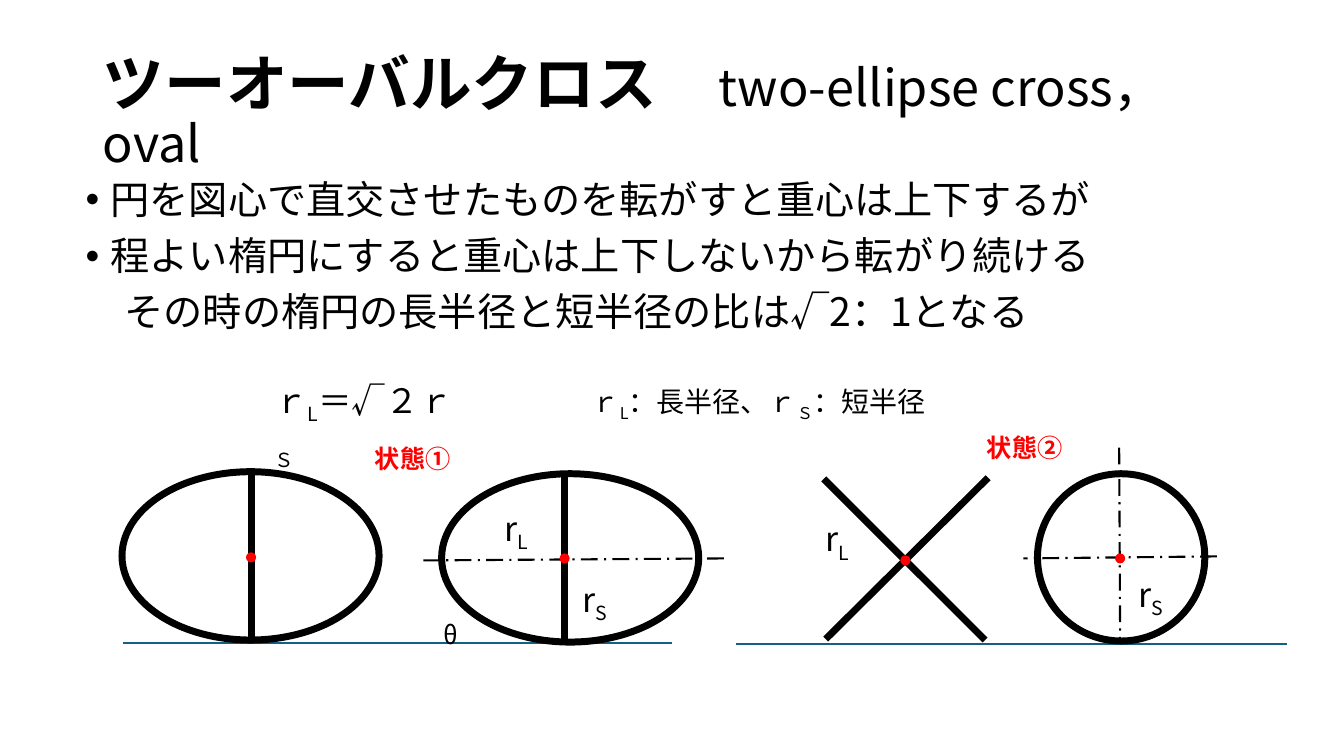
from dataclasses import dataclass
from typing import NamedTuple

from lxml.etree import SubElement as Sub
from pptx import Presentation
from pptx.dml.color import RGBColor as Rgb
from pptx.enum.dml import MSO_LINE_DASH_STYLE as Dash
from pptx.enum.shapes import MSO_CONNECTOR as Link, MSO_SHAPE as Form
from pptx.enum.text import MSO_ANCHOR as Anchor, PP_ALIGN as Align
from pptx.oxml.ns import qn
from pptx.util import Inches, Pt


@dataclass(frozen=True)
class Theme:
    font: str = "Noto Sans CJK JP"
    black: Rgb = Rgb(0, 0, 0)
    red: Rgb = Rgb(255, 0, 0)
    blue: Rgb = Rgb(0x15, 0x60, 0x82)
    title: int = 44
    sub: int = 36
    body: int = 28
    math: int = 24
    note: int = 20
    label: int = 18
    thick: float = 5
    thin: float = 1.5


THEME = Theme()


class Bit(NamedTuple):
    text: str
    size: int
    low: bool = False
    bold: bool = False
    color: Rgb = THEME.black


class Label(NamedTuple):
    x: float
    y: float
    w: float
    h: float
    bits: list[Bit]


class Stroke(NamedTuple):
    x1: float
    y1: float
    x2: float
    y2: float
    width: float = THEME.thick
    color: Rgb = THEME.black
    dash: bool = False


class Oval(NamedTuple):
    x: float
    y: float
    w: float
    h: float


def style(run, bit: Bit) -> None:
    font = run.font
    font.name = THEME.font
    font.size = Pt(bit.size)
    font.bold = bit.bold
    font.color.rgb = bit.color
    props = run._r.get_or_add_rPr()
    if bit.low:
        props.set("baseline", "-25000")
    Sub(props, qn("a:ea")).set("typeface", THEME.font)


def write(para, bits: list[Bit]) -> None:
    for bit in bits:
        if bit.text.startswith("\n"):
            para.add_line_break()
        run = para.add_run()
        run.text = bit.text.strip("\n")
        style(run, bit)


def add_box(slide, x: float, y: float, w: float, h: float):
    box = slide.shapes.add_textbox(Inches(x), Inches(y), Inches(w), Inches(h))
    box.text_frame.word_wrap = True
    return box.text_frame


def add_label(slide, label: Label) -> None:
    frame = add_box(slide, *label[:4])
    write(frame.paragraphs[0], label.bits)


def add_title(slide) -> None:
    title = slide.shapes.title
    title.left, title.top = Inches(0.92), Inches(0.4)
    title.width, title.height = Inches(11.5), Inches(1.45)
    frame = title.text_frame
    frame.word_wrap = True
    frame.vertical_anchor = Anchor.MIDDLE
    para = frame.paragraphs[0]
    para.alignment = Align.LEFT
    para.line_spacing = 0.9
    write(para, [Bit("ツーオーバルクロス　", THEME.title, bold=True),
                 Bit("two-ellipse cross，oval", THEME.sub)])


def add_body(slide, lines: list[tuple[str, bool]]) -> None:
    frame = add_box(slide, 0.75, 1.74, 11.5, 1.8)
    frame.text = "\n".join(text for text, _ in lines)
    for para, (text, mark) in zip(frame.paragraphs, lines):
        para.line_spacing = 0.9
        para.space_before = Pt(10)
        style(para.runs[0], Bit(text, THEME.body))
        if mark:
            props = para._p.get_or_add_pPr()
            props.set("marL", str(Inches(0.25)))
            props.set("indent", str(-Inches(0.25)))
            Sub(props, qn("a:buFont")).set("typeface", "Arial")
            Sub(props, qn("a:buChar")).set("char", "•")


def add_stroke(slide, stroke: Stroke) -> None:
    ends = [Inches(end) for end in stroke[:4]]
    link = slide.shapes.add_connector(Link.STRAIGHT, *ends)
    link.line.width = Pt(stroke.width)
    link.line.color.rgb = stroke.color
    if stroke.dash:
        link.line.dash_style = Dash.LONG_DASH_DOT
    Sub(link._element.spPr, qn("a:effectLst"))


def add_oval(slide, oval: Oval):
    shape = slide.shapes.add_shape(Form.OVAL, *[Inches(side) for side in oval])
    shape.shadow.inherit = False
    return shape


def add_ring(slide, oval: Oval) -> None:
    ring = add_oval(slide, oval)
    ring.fill.background()
    ring.line.width = Pt(THEME.thick)
    ring.line.color.rgb = THEME.black


def add_dot(slide, x: float, y: float) -> None:
    dot = add_oval(slide, Oval(x - 0.05, y - 0.05, 0.1, 0.1))
    dot.fill.solid()
    dot.fill.fore_color.rgb = THEME.red
    dot.line.fill.background()


def low(letter: str, size: int) -> Bit:
    return Bit(letter, size, low=True)


def radius(x: float, y: float, letter: str) -> Label:
    return Label(x, y, 1.06, 0.5, [Bit("r", THEME.math), low(letter, THEME.math)])


def state(x: float, y: float, text: str) -> Label:
    return Label(x, y, 1.22, 0.4,
                 [Bit(text, THEME.label, bold=True, color=THEME.red)])


BODY = [("円を図心で直交させたものを転がすと重心は上下するが", True),
        ("程よい楕円にすると重心は上下しないから転がり続ける", True),
        ("　その時の楕円の長半径と短半径の比は√2：1となる", False)]
AXES = [(7.18, 5.54, 4.2, 5.56), (12.07, 5.52, 10.15, 5.54), (11.1, 4.44, 11.11, 6.36)]
BARS = [(2.49, 4.71, 2.49, 6.38), (5.6, 4.7, 5.6, 6.37),
        (9.8, 4.74, 8.19, 6.34), (8.17, 4.75, 9.77, 6.35)]
FLOORS = [(1.22, 6.38, 6.67, 6.38), (7.3, 6.39, 12.76, 6.39)]
STROKES = ([Stroke(*axis, THEME.thin, dash=True) for axis in AXES]
           + [Stroke(*bar) for bar in BARS]
           + [Stroke(*floor, THEME.thin, THEME.blue) for floor in FLOORS])
RINGS = [Oval(1.21, 4.68, 2.55, 1.67), Oval(4.38, 4.7, 2.55, 1.67),
         Oval(10.29, 4.7, 1.66, 1.66)]
DOTS = [(2.49, 5.53), (5.6, 5.54), (8.98, 5.56), (11.11, 5.54)]
LABELS = [
    Label(2.62, 3.72, 3.04, 0.5,
          [Bit("ｒ", THEME.math), low("L", THEME.math),
           Bit("＝√２ｒ", THEME.math), low("\nＳ", THEME.math)]),
    Label(5.77, 3.77, 4.85, 0.44,
          [Bit("ｒ", THEME.note), low("L", THEME.note),
           Bit("：長半径、ｒ", THEME.note), low("Ｓ", THEME.note),
           Bit("：短半径", THEME.note)]),
    Label(4.3, 6.09, 0.72, 0.4, [Bit("θ", THEME.label)]),
    radius(4.91, 4.99, "L"), radius(8.09, 5.09, "L"),
    radius(5.68, 5.69, "S"), radius(11.19, 5.64, "S"),
    state(3.62, 4.35, "状態①"), state(9.69, 4.24, "状態②")]


def main() -> None:
    deck = Presentation()
    deck.slide_width, deck.slide_height = Inches(13.33), Inches(7.5)
    slide = deck.slides.add_slide(deck.slide_layouts[5])
    add_title(slide)
    add_body(slide, BODY)
    for stroke in STROKES:
        add_stroke(slide, stroke)
    for ring in RINGS:
        add_ring(slide, ring)
    for dot in DOTS:
        add_dot(slide, *dot)
    for label in LABELS:
        add_label(slide, label)
    deck.save("out.pptx")


if __name__ == "__main__":
    main()
